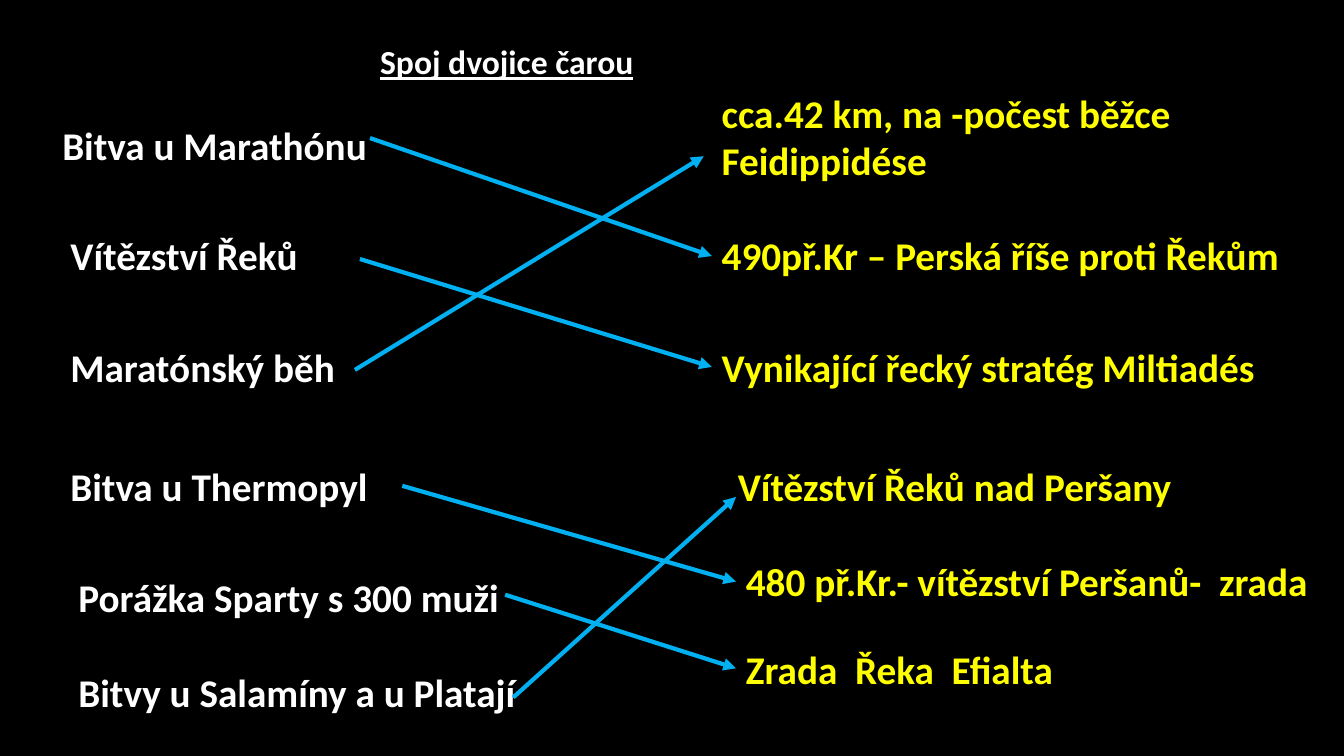
from lxml import etree
from pptx import Presentation
from pptx import util as u
from pptx.dml import color
from pptx.enum import shapes, text
from pptx.oxml import ns

PX = 9144
HUES = {"back": "000000", "term": "FFFFFF", "match": "FFFF00", "arrow": "00B0F0"}

TERMS = [
    (52, 115, 496, 57, "Bitva u Marathónu"),
    (60, 225, 465, 57, "Vítězství Řeků"),
    (60, 336, 362, 57, "Maratónský běh"),
    (60, 454, 409, 57, "Bitva u Thermopyl"),
    (68, 564, 480, 57, "Porážka Sparty s 300 muži"),
    (68, 658, 480, 57, "Bitvy u Salamíny a u Platají"),
]
MATCHES = [
    (706, 84, 606, 104, "cca.42 km, na -počest běžce Feidippidése"),
    (706, 225, 606, 57, "490př.Kr – Perská říše proti Řekům"),
    (706, 336, 575, 57, "Vynikající řecký stratég Miltiadés"),
    (722, 454, 504, 57, "Vítězství Řeků nad Peršany"),
    (730, 548, 583, 57, "480 př.Kr.- vítězství Peršanů-  zrada"),
    (730, 635, 528, 57, "Zrada  Řeka  Efialta"),
]
ARROWS = [
    (352, 367, 698, 155),
    (357, 257, 706, 364),
    (367, 137, 706, 254),
    (501, 590, 730, 663),
    (509, 692, 730, 493),
    (399, 482, 730, 577),
]


def hue(name):
    return color.RGBColor.from_string(HUES[name])


class Deck:
    font = {"name": "Calibri", "size": u.Pt(28), "bold": True}
    frame = {
        "word_wrap": True,
        "auto_size": text.MSO_AUTO_SIZE.SHAPE_TO_FIT_TEXT,
        "vertical_anchor": text.MSO_ANCHOR.TOP,
    }

    def __init__(self, wide, high):
        self.prs = Presentation()
        self.prs.slide_width, self.prs.slide_height = wide * PX, high * PX
        self.slide = self.prs.slides.add_slide(self.prs.slide_layouts[5])
        fill = self.slide.background.fill
        fill.solid()
        fill.fore_color.rgb = hue("back")

    def letter(self, box, words, tint, **more):
        frame = box.text_frame
        frame.text = words
        for key, val in self.frame.items():
            setattr(frame, key, val)
        para = frame.paragraphs[0]
        para.alignment = text.PP_ALIGN.LEFT
        font = para.runs[0].font
        for key, val in {**self.font, **more}.items():
            setattr(font, key, val)
        font.color.rgb = hue(tint)

    def title(self, left, top, wide, high, words):
        box = self.slide.shapes.title
        place = {"left": left, "top": top, "width": wide, "height": high}
        for key, val in place.items():
            setattr(box, key, val * PX)
        self.letter(box, words, "term", size=u.Pt(24), underline=True)

    def label(self, left, top, wide, high, words, tint):
        spot = [n * PX for n in (left, top, wide, high)]
        self.letter(self.slide.shapes.add_textbox(*spot), words, tint)

    def arrow(self, *ends):
        link = self.slide.shapes.add_connector(
            shapes.MSO_CONNECTOR.STRAIGHT, *[n * PX for n in ends])
        link.line.color.rgb = hue("arrow")
        link.line.width = u.Pt(3)
        props = link.element.spPr
        etree.SubElement(props.find(ns.qn("a:ln")), ns.qn("a:tailEnd"), type="triangle")
        etree.SubElement(props, ns.qn("a:effectLst"))


def main():
    deck = Deck(1333, 750)
    deck.title(367, 36, 315, 50, "Spoj dvojice čarou")
    for tint, rows in (("term", TERMS), ("match", MATCHES)):
        for row in rows:
            deck.label(*row, tint)
    for ends in ARROWS:
        deck.arrow(*ends)
    deck.prs.save("out.pptx")


if __name__ == "__main__":
    main()
